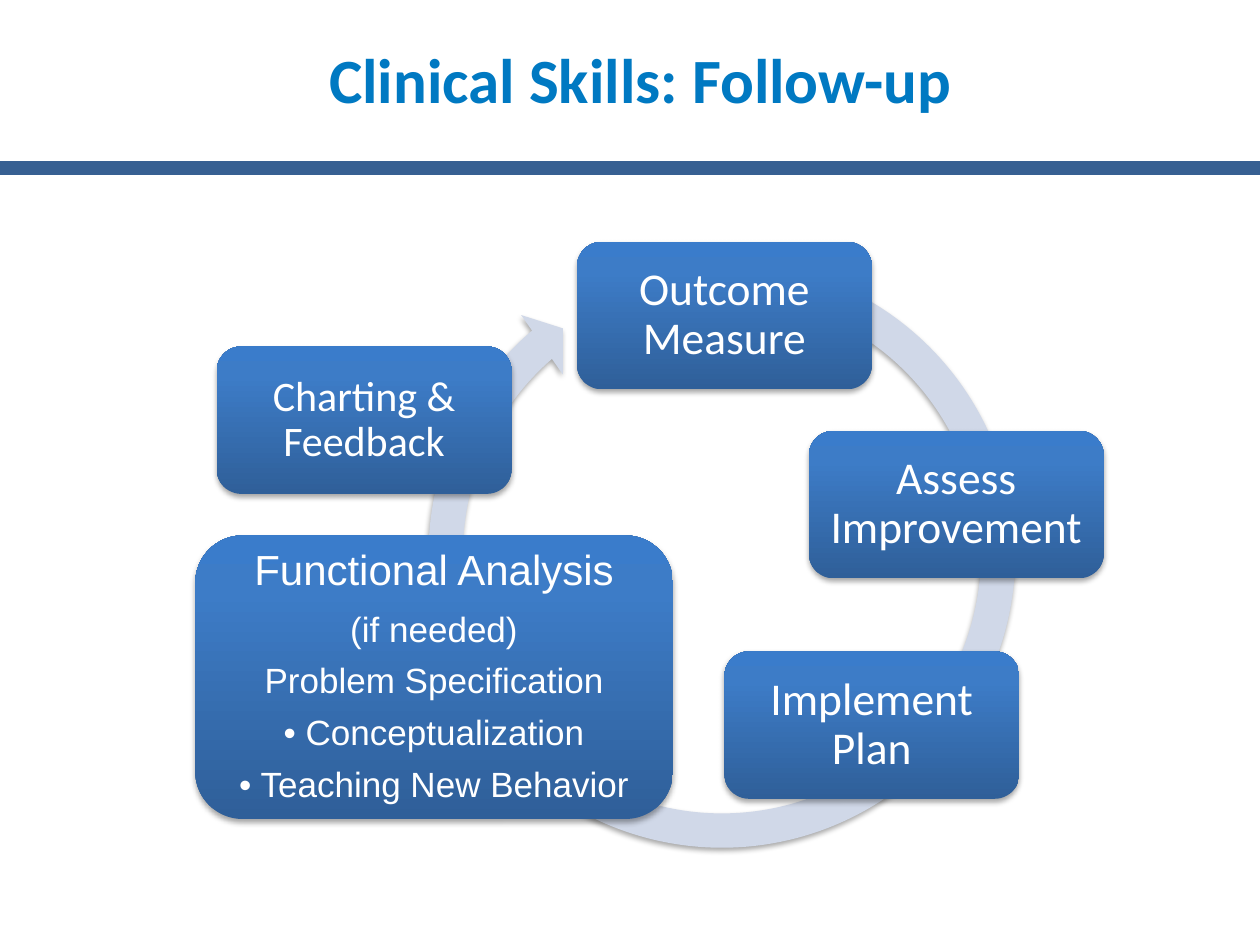
"""Build the clinical skills follow-up cycle slide."""
import copy

import pptx
import pptx.dml.color
import pptx.enum.shapes
import pptx.enum.text
import pptx.oxml
import pptx.oxml.ns
import pptx.util
from pptx.util import Inches

SHAPE = pptx.enum.shapes.MSO_SHAPE
MIDDLE = pptx.enum.text.MSO_ANCHOR.MIDDLE
CENTER = pptx.enum.text.PP_ALIGN.CENTER
STOPS = [(0, "2F5F99"), (0.8, "3D7CC7"), (1, "3A7CCB")]
NS = pptx.oxml.ns.nsdecls("a")
SHADOW = (
    f'<a:outerShdw {NS} blurRad="40000" dist="23000" '
    'dir="5400000" rotWithShape="0"><a:srgbClr val="000000">'
    '<a:alpha val="35000"/></a:srgbClr></a:outerShdw>'
)


def rgb(value):
    return pptx.dml.color.RGBColor.from_string(value)


def add_shadowed(kind, left, top, width, height):
    sp = s.shapes.add_shape(kind, Inches(left), Inches(top), Inches(width), Inches(height))
    sp.line.fill.background()
    sp.shadow.inherit = False
    effects = sp._element.spPr.find(pptx.oxml.ns.qn("a:effectLst"))
    effects.append(pptx.oxml.parse_xml(SHADOW))
    return sp


prs = pptx.Presentation()
prs.slide_width, prs.slide_height = Inches(10), Inches(7.5)
s = prs.slides.add_slide(prs.slide_layouts[6])

rule = s.shapes.add_connector(
    pptx.enum.shapes.MSO_CONNECTOR.STRAIGHT, 0, Inches(1.33), Inches(10), Inches(1.33)
)
rule.line.color.rgb = rgb("376092")
rule.line.width = pptx.util.Pt(8)
rule._element.spPr.append(pptx.oxml.parse_xml(f"<a:effectLst {NS}/>"))

title = s.shapes.add_textbox(Inches(1.25), 0, Inches(7.67), Inches(1.25))
tf = title.text_frame
tf.word_wrap = True
tf.vertical_anchor = MIDDLE
p = tf.paragraphs[0]
p.text = "Clinical Skills: Follow-up"
p.alignment = CENTER
p.font.name, p.font.size, p.font.bold = "Calibri", pptx.util.Pt(36), True
p.font.color.rgb = rgb("0079C2")

cycle = add_shadowed(SHAPE.CIRCULAR_ARROW, 3.25, 1.92, 4.96, 4.96)
cycle.fill.solid()
cycle.fill.fore_color.rgb = rgb("D0D8E8")
for i, value in enumerate([0.055, 3.307, 137.617, 173.946, 0.058]):
    cycle.adjustments[i] = value

analysis = [
    ("Functional Analysis", 24),
    ("(if needed)", 20),
    ("Problem Specification", 20),
    ("• Conceptualization", 20),
    ("• Teaching New Behavior", 20),
]
steps = [
    (6.42, 3.42, 2.34, 1.17, 0.11, "Calibri", [("Assess Improvement", 26)]),
    (5.75, 5.17, 2.34, 1.17, 0.11, "Calibri", [("Implement Plan", 26)]),
    (4.58, 1.92, 2.34, 1.17, 0.11, "Calibri", [("Outcome Measure", 26)]),
    (1.55, 4.25, 3.79, 2.25, 0.1, "Arial", analysis),
    (1.72, 2.75, 2.34, 1.17, 0.1, "Calibri", [("Charting & Feedback", 24)]),
]
for left, top, width, height, inset, font, lines in steps:
    sp = add_shadowed(SHAPE.ROUNDED_RECTANGLE, left, top, width, height)
    sp.fill.gradient()
    sp.fill.gradient_angle = 90
    stop_list = sp._element.spPr.find(".//" + pptx.oxml.ns.qn("a:gsLst"))
    stop_list.append(copy.deepcopy(stop_list[-1]))
    for stop, (position, color) in zip(sp.fill.gradient_stops, STOPS):
        stop.position = position
        stop.color.rgb = rgb(color)

    tf = sp.text_frame
    tf.word_wrap = True
    tf.vertical_anchor = MIDDLE
    tf.margin_left = tf.margin_right = tf.margin_top = tf.margin_bottom = Inches(inset)
    for i, (text, size) in enumerate(lines):
        p = tf.add_paragraph() if i else tf.paragraphs[0]
        p.text = text
        p.alignment = CENTER
        p.line_spacing = 0.9
        p.space_after = pptx.util.Pt(0.4 * size)
        p.font.name, p.font.size = font, pptx.util.Pt(size)
        p.font.color.rgb = rgb("FFFFFF")

prs.save("out.pptx")
